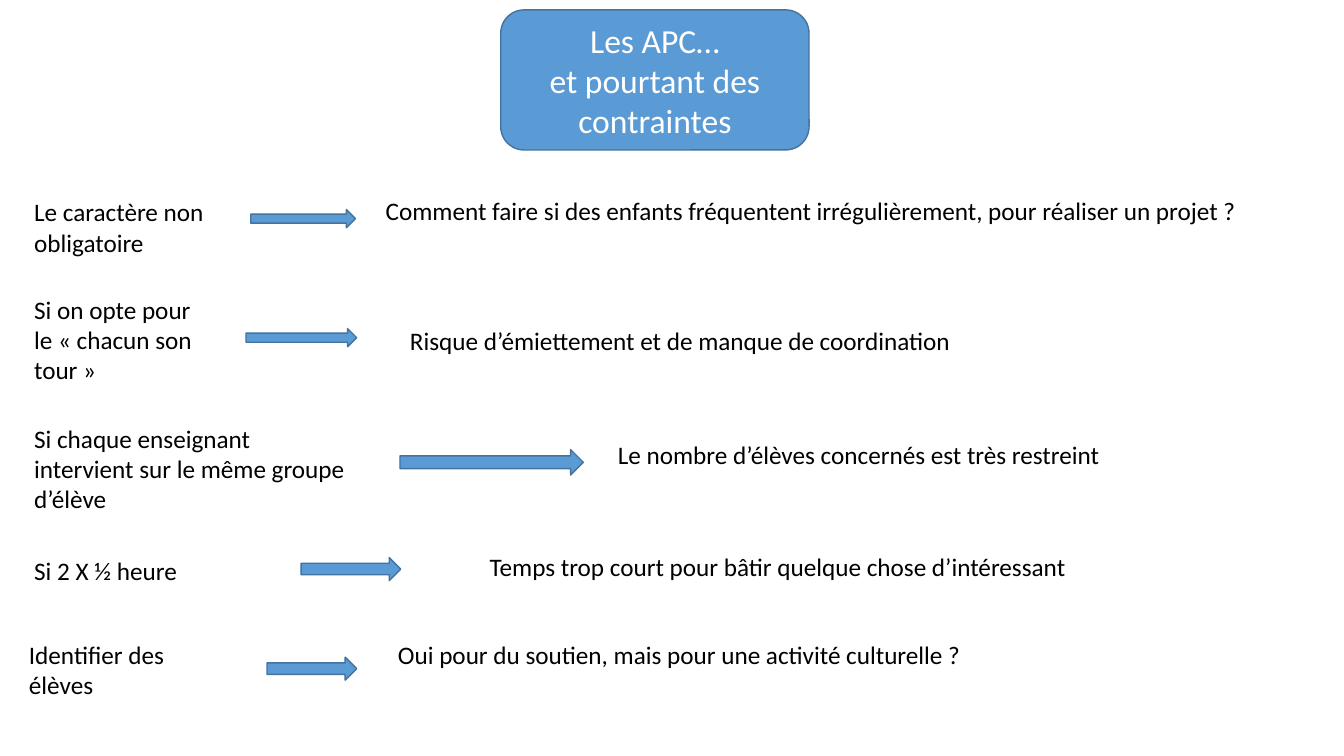
from dataclasses import dataclass
from typing import NamedTuple

from pptx import Presentation
from pptx.dml.color import RGBColor
from pptx.enum.shapes import MSO_SHAPE
from pptx.enum.text import MSO_ANCHOR, MSO_AUTO_SIZE, PP_ALIGN
from pptx.util import Cm, Pt


@dataclass(frozen=True)
class Theme:
    font: str = "Calibri"
    title_size: int = 24
    body_size: int = 18
    fill: RGBColor = RGBColor(0x5B, 0x9B, 0xD5)
    outline: RGBColor = RGBColor(0x43, 0x73, 0x9E)
    light: RGBColor = RGBColor(0xFF, 0xFF, 0xFF)
    dark: RGBColor = RGBColor(0x00, 0x00, 0x00)


class Area(NamedTuple):
    """Left, top, width and height in centimetres."""
    left: float
    top: float
    width: float
    height: float

    def lengths(self):
        return [Cm(value) for value in self]


class Constraint(NamedTuple):
    cause: str
    cause_lines: int
    cause_place: tuple  # left, top, width
    arrow: Area
    effect: str
    effect_place: tuple  # left, top, width


TITLE = ["Les APC…", "et pourtant des contraintes"]
TITLE_AREA = Area(12.62, 0.25, 7.77, 3.53)

CONSTRAINTS = [
    Constraint("Le caractère non obligatoire", 2, (0.61, 4.83, 5.72),
               Area(6.32, 5.28, 2.64, 0.46),
               "Comment faire si des enfants fréquentent irrégulièrement, pour réaliser un projet ?",
               (9.47, 4.8, 22.78)),
    Constraint("Si on opte pour le « chacun son tour »", 3, (0.61, 7.29, 4.98),
               Area(6.2, 8.28, 2.79, 0.46),
               "Risque d’émiettement et de manque de coordination",
               (10.08, 8.08, 22.17)),
    Constraint("Si chaque enseignant intervient sur le même groupe d’élève", 3,
               (0.61, 10.54, 8.38),
               Area(10.08, 11.33, 4.62, 0.64),
               "Le nombre d’élèves concernés est très restreint",
               (15.32, 10.95, 17.58)),
    Constraint("Si 2 X ½ heure", 1, (0.61, 13.87, 5.23),
               Area(7.59, 14.05, 2.51, 0.58),
               "Temps trop court pour bâtir quelque chose d’intéressant",
               (12.09, 13.77, 19.79)),
    Constraint("Identifier des élèves", 2, (0.48, 15.98, 5.23),
               Area(6.73, 16.56, 2.26, 0.58),
               "Oui pour du soutien, mais pour une activité culturelle ?",
               (9.78, 15.98, 22.5)),
]


class SlideBuilder:
    def __init__(self, page, theme):
        self.page = page
        self.theme = theme

    def fill_text(self, frame, lines, size, color, align):
        frame.word_wrap = True
        frame.text = "\n".join(lines)
        for paragraph in frame.paragraphs:
            paragraph.alignment = align
            paragraph.font.name = self.theme.font
            paragraph.font.size = Pt(size)
            paragraph.font.color.rgb = color

    def shape(self, kind, area):
        shape = self.page.shapes.add_shape(kind, *area.lengths())
        shape.shadow.inherit = False
        shape.fill.solid()
        shape.fill.fore_color.rgb = self.theme.fill
        shape.line.color.rgb = self.theme.outline
        shape.line.width = Pt(1)

    def title(self, lines, area):
        title = self.page.shapes.title
        title.left, title.top, title.width, title.height = area.lengths()
        frame = title.text_frame
        frame.auto_size = MSO_AUTO_SIZE.NONE
        frame.vertical_anchor = MSO_ANCHOR.MIDDLE
        self.fill_text(frame, lines, self.theme.title_size, self.theme.light, PP_ALIGN.CENTER)

    def text(self, content, place, line_count=1):
        area = Area(*place, 0.25 + 0.77 * line_count)
        box = self.page.shapes.add_textbox(*area.lengths())
        self.fill_text(box.text_frame, [content], self.theme.body_size, self.theme.dark,
                       PP_ALIGN.LEFT)
        box.text_frame.auto_size = MSO_AUTO_SIZE.SHAPE_TO_FIT_TEXT


def main():
    deck = Presentation()
    deck.slide_width, deck.slide_height = Cm(33.87), Cm(19.05)
    title_only = deck.slide_layouts.get_by_name("Title Only")
    page = deck.slides.add_slide(title_only)
    builder = SlideBuilder(page, Theme())

    # Title on its rounded panel, which goes behind the text
    builder.shape(MSO_SHAPE.ROUNDED_RECTANGLE, TITLE_AREA)
    tree = page.shapes.title.element.getparent()
    tree.append(page.shapes.title.element)
    builder.title(TITLE, TITLE_AREA)

    # Each constraint leads to its consequence
    for row in CONSTRAINTS:
        builder.text(row.cause, row.cause_place, row.cause_lines)
        builder.shape(MSO_SHAPE.RIGHT_ARROW, row.arrow)
        builder.text(row.effect, row.effect_place)

    deck.save("out.pptx")


if __name__ == "__main__":
    main()
